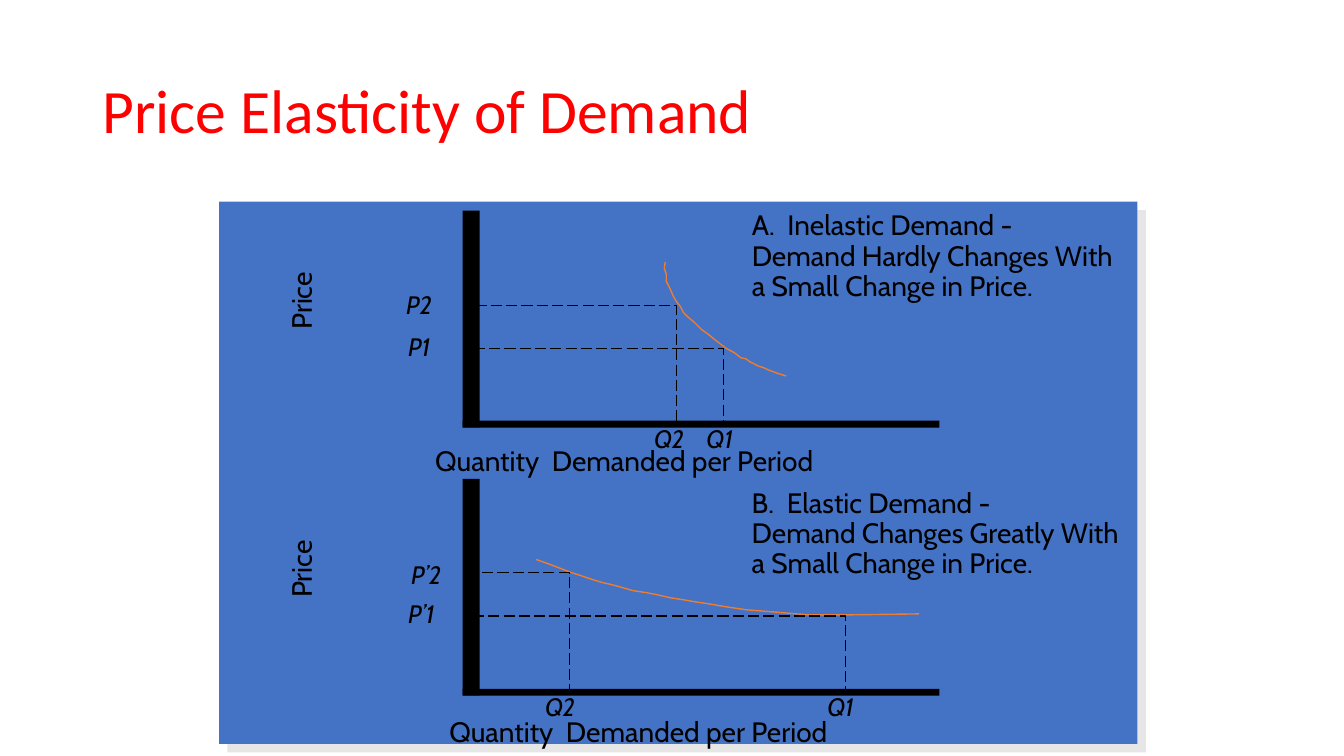
from lxml import etree
from pptx import Presentation
from pptx.dml.color import RGBColor
from pptx.enum import dml, shapes, text
from pptx.oxml import ns
from pptx.util import Pt

RED = RGBColor(0xFF, 0x00, 0x00)
BLACK = RGBColor(0x00, 0x00, 0x00)
BLUE = RGBColor(0x44, 0x72, 0xC4)
ORANGE = RGBColor(0xED, 0x7D, 0x31)
GREY = RGBColor(0xE7, 0xE6, 0xE6)

deck = Presentation()
deck.slide_width, deck.slide_height = Pt(960), Pt(540)
page = deck.slides.add_slide(deck.slide_layouts[6])


def add_text(words, area, size, font="Cabin", color=BLACK, italic=False, wrap=False):
    box = page.shapes.add_textbox(*map(Pt, area))
    frame = box.text_frame
    frame.text = words
    frame.word_wrap = wrap
    frame.auto_size = text.MSO_AUTO_SIZE.SHAPE_TO_FIT_TEXT
    for para in frame.paragraphs:
        para.line_spacing = 0.9
        for span in para.runs:
            span.font.name, span.font.size = font, Pt(size)
            span.font.color.rgb, span.font.italic = color, italic
    return box


def add_rectangle(parent, area, fill=None):
    """Add a filled rectangle, or a dashed outline when no fill is given."""
    shape = parent.add_shape(shapes.MSO_SHAPE.RECTANGLE, *map(Pt, area))
    shape.shadow.inherit = False
    if fill is None:
        shape.fill.background()
        shape.line.color.rgb, shape.line.width = BLACK, Pt(1)
        shape.line.dash_style = dml.MSO_LINE.LONG_DASH
    else:
        shape.fill.solid()
        shape.fill.fore_color.rgb = fill
        shape.line.fill.background()
    return shape


title = add_text("Price Elasticity of Demand", (66.2, 28.8, 828, 104.4), 44,
                 font="Calibri", color=RED, wrap=True)
title.text_frame.auto_size = text.MSO_AUTO_SIZE.NONE
title.text_frame.vertical_anchor = text.MSO_ANCHOR.MIDDLE

panel = add_rectangle(page.shapes, (156.5, 144, 656, 387.4), BLUE)
effects = panel._element.spPr.find(ns.qn("a:effectLst"))
shadow = etree.SubElement(effects, ns.qn("a:outerShdw"), dist=str(Pt(8.5)),
                          dir="2700000", algn="ctr", rotWithShape="0")
etree.SubElement(shadow, ns.qn("a:srgbClr"), val=str(GREY))

inelastic_curve = [
    (561.6, 268.6), (556.6, 267.1), (548.6, 264.2), (545.8, 262.8), (541.4, 261.4),
    (538.6, 259.9), (535.7, 258.5), (532.8, 256.3), (529.2, 255.6), (525.6, 252.7),
    (523.4, 251.3), (519.1, 249.1), (516.2, 247), (513.4, 244.8), (510.5, 242.6),
    (506.2, 239), (501.1, 235.4), (496.1, 230.4), (491, 226.1), (488.2, 223.2),
    (486, 218.9), (483.1, 215.3), (481, 211.7), (478.8, 206.6), (475.9, 200.9),
    (475.9, 195.8), (474.5, 191.5), (475.2, 187.2)]
elastic_curve = [
    (383, 399.6), (393.1, 403.2), (408.2, 409), (414.7, 411.1), (423.4, 414),
    (430.6, 416.2), (437, 417.6), (445, 419.8), (452.2, 421.9), (462.2, 423.4),
    (469.4, 424.8), (478.8, 427), (488.2, 428.4), (496.1, 429.8), (506.2, 431.3),
    (518.4, 433.4), (533.5, 435.6), (551.5, 437), (568.8, 438.5), (579.6, 439.2),
    (592.6, 439.2), (605.5, 439.2), (656.6, 438.5)]

# Each chart: top, curve, guide corners (x, y), axis labels, quantity title, note
charts = [
    (150.5, inelastic_curve, [(516.9, 249.1), (483.1, 218.2)],
     [("P2", 283, 205.9, 33), ("P1", 284.4, 235.4, 33),
      ("Q1", 497.5, 301, 36), ("Q2", 460.1, 301, 36)],
     (303.8, 316.1, 293.8, 28.1), False,
     "A.  Inelastic Demand -\nDemand Hardly Changes With\na Small Change in Price.",
     (529.9, 147.6, 277.2, 71.3)),
    (342, elastic_curve, [(604.1, 439.9), (406.8, 409)],
     [("P’2", 286.6, 398.2, 36.7), ("P’1", 284.4, 426.2, 36.7),
      ("Q1", 583.9, 492.5, 36), ("Q2", 382.3, 492.5, 36)],
     (313.9, 509.8, 291.6, 28.1), True,
     "B.  Elastic Demand -\nDemand Changes Greatly With\na Small Change in Price.",
     (529.9, 345.6, 283.7, 71.3)),
]

for top, curve, corners, labels, quantity_area, wraps, note, note_area in charts:
    axes = page.shapes.add_group_shape().shapes
    add_rectangle(axes, (330.5, top, 12.2, 154.8), BLACK)
    add_rectangle(axes, (330.5, top + 150, 340.6, 5), BLACK)

    price = add_text("Price", (187.9, top + 50, 56.2, 28.1), 20)
    price.rotation = 270

    points = [(Pt(x), Pt(y)) for x, y in curve]
    builder = page.shapes.build_freeform(*points[0])
    builder.add_line_segments(points[1:], close=False)
    line = builder.convert_to_shape()
    line.shadow.inherit = False
    line.fill.background()
    line.line.color.rgb, line.line.width = ORANGE, Pt(1)

    add_text("Quantity  Demanded per Period", quantity_area, 20, wrap=wraps)
    add_text(note, note_area, 20)
    for left, (x, y) in zip((339.1, 342), corners):
        add_rectangle(page.shapes, (left, y, x - left, top + 152.2 - y))
    for words, x, y, width in labels:
        add_text(words, (x, y, width, 25.9), 18, italic=True)

deck.save("out.pptx")
